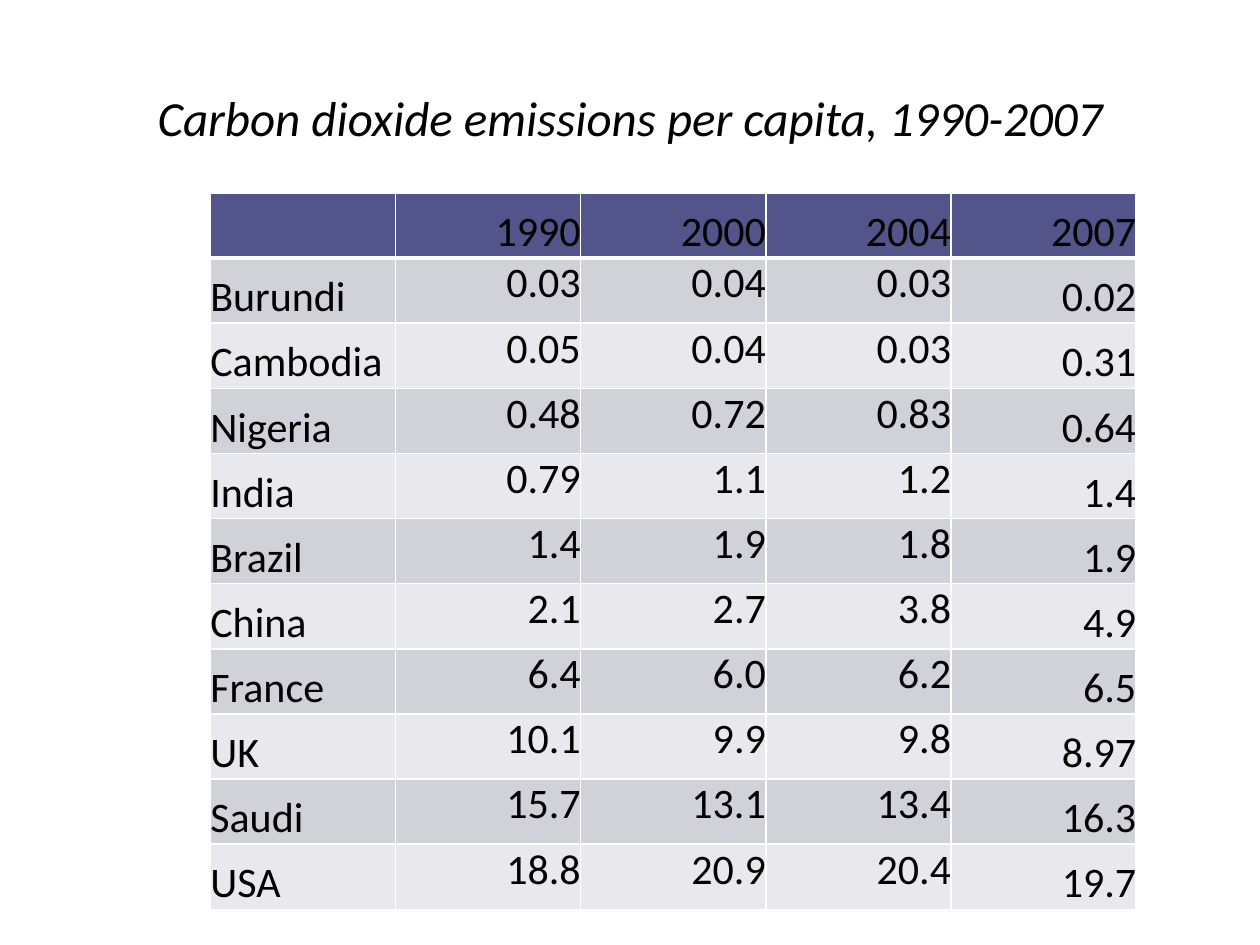
import dataclasses

import lxml.etree
import pptx
import pptx.dml.color
import pptx.enum.text
import pptx.oxml.ns
import pptx.util

Pt = pptx.util.Pt
Align = pptx.enum.text.PP_ALIGN
Anchor = pptx.enum.text.MSO_ANCHOR


@dataclasses.dataclass(frozen=True)
class Theme:
    font: str = "Calibri"
    ink: str = "000000"
    header: str = "53548A"
    bands: tuple = ("D1D1DA", "E9E9ED")
    border: str = "FFFFFF"
    title_size: int = 28
    cell_size: int = 24
    thin: int = 1
    thick: int = 3


EMISSIONS = [
    ("", "1990", "2000", "2004", "2007"),
    ("Burundi", "0.03", "0.04", "0.03", "0.02"),
    ("Cambodia", "0.05", "0.04", "0.03", "0.31"),
    ("Nigeria", "0.48", "0.72", "0.83", "0.64"),
    ("India", "0.79", "1.1", "1.2", "1.4"),
    ("Brazil", "1.4", "1.9", "1.8", "1.9"),
    ("China", "2.1", "2.7", "3.8", "4.9"),
    ("France", "6.4", "6.0", "6.2", "6.5"),
    ("UK", "10.1", "9.9", "9.8", "8.97"),
    ("Saudi", "15.7", "13.1", "13.4", "16.3"),
    ("USA", "18.8", "20.9", "20.4", "19.7"),
]


class PageBuilder:
    def __init__(self, page, theme):
        self.page = page
        self.theme = theme

    def add_text(self, para, text, size, align, italic=False):
        para.alignment = align
        span = para.add_run()
        span.text = text
        span.font.name = self.theme.font
        span.font.size = Pt(size)
        span.font.bold = False
        span.font.italic = italic
        span.font.color.rgb = pptx.dml.color.RGBColor.from_string(self.theme.ink)

    def add_title(self, text, left, top, width, height):
        box = self.page.shapes.title
        box.left, box.top, box.width, box.height = map(Pt, (left, top, width, height))
        box.text_frame.vertical_anchor = Anchor.MIDDLE
        self.add_text(box.text_frame.paragraphs[0], text,
                      self.theme.title_size, Align.CENTER, italic=True)

    def add_borders(self, cell, widths):
        properties = cell._tc.get_or_add_tcPr()
        qn = pptx.oxml.ns.qn
        for position, (side, width) in enumerate(widths.items()):
            line = lxml.etree.Element(qn(f"a:ln{side}"), w=str(Pt(width)))
            fill = lxml.etree.SubElement(line, qn("a:solidFill"))
            lxml.etree.SubElement(fill, qn("a:srgbClr"), val=self.theme.border)
            properties.insert(position, line)

    def format_cell(self, cell, text, row, column, last_column):
        theme = self.theme
        is_header = row == 0
        color = theme.header if is_header else theme.bands[(row - 1) % 2]
        cell.fill.solid()
        cell.fill.fore_color.rgb = pptx.dml.color.RGBColor.from_string(color)
        cell.margin_left = cell.margin_right = Pt(0)
        cell.margin_top = cell.margin_bottom = Pt(0)
        at_bottom = is_header or column in (0, last_column)
        cell.vertical_anchor = Anchor.BOTTOM if at_bottom else Anchor.TOP
        self.add_borders(cell, {
            "L": theme.thin,
            "R": theme.thin,
            "T": theme.thick if row == 1 else theme.thin,
            "B": theme.thick if is_header else theme.thin,
        })
        if text:
            align = Align.LEFT if column == 0 else Align.RIGHT
            self.add_text(cell.text_frame.paragraphs[0], text, theme.cell_size, align)

    def add_table(self, records, left, top, width, height):
        column_count = len(records[0])
        table = self.page.shapes.add_table(
            len(records), column_count, Pt(left), Pt(top), Pt(width), Pt(height)).table
        for table_column in table.columns:
            table_column.width = Pt(width / column_count)
        for table_row in table.rows:
            table_row.height = Pt(height / len(records))
        for row, record in enumerate(records):
            for column, text in enumerate(record):
                self.format_cell(table.cell(row, column), text,
                                 row, column, column_count - 1)


def main():
    deck = pptx.Presentation()
    deck.slide_width, deck.slide_height = Pt(720), Pt(540)
    page = deck.slides.add_slide(deck.slide_layouts[5])
    builder = PageBuilder(page, Theme())
    builder.add_title("Carbon dioxide emissions per capita, 1990-2007", 36, 21.6, 648, 90)
    builder.add_table(EMISSIONS, 120.2, 110.2, 529.2, 409.7)
    deck.save("out.pptx")


if __name__ == "__main__":
    main()
